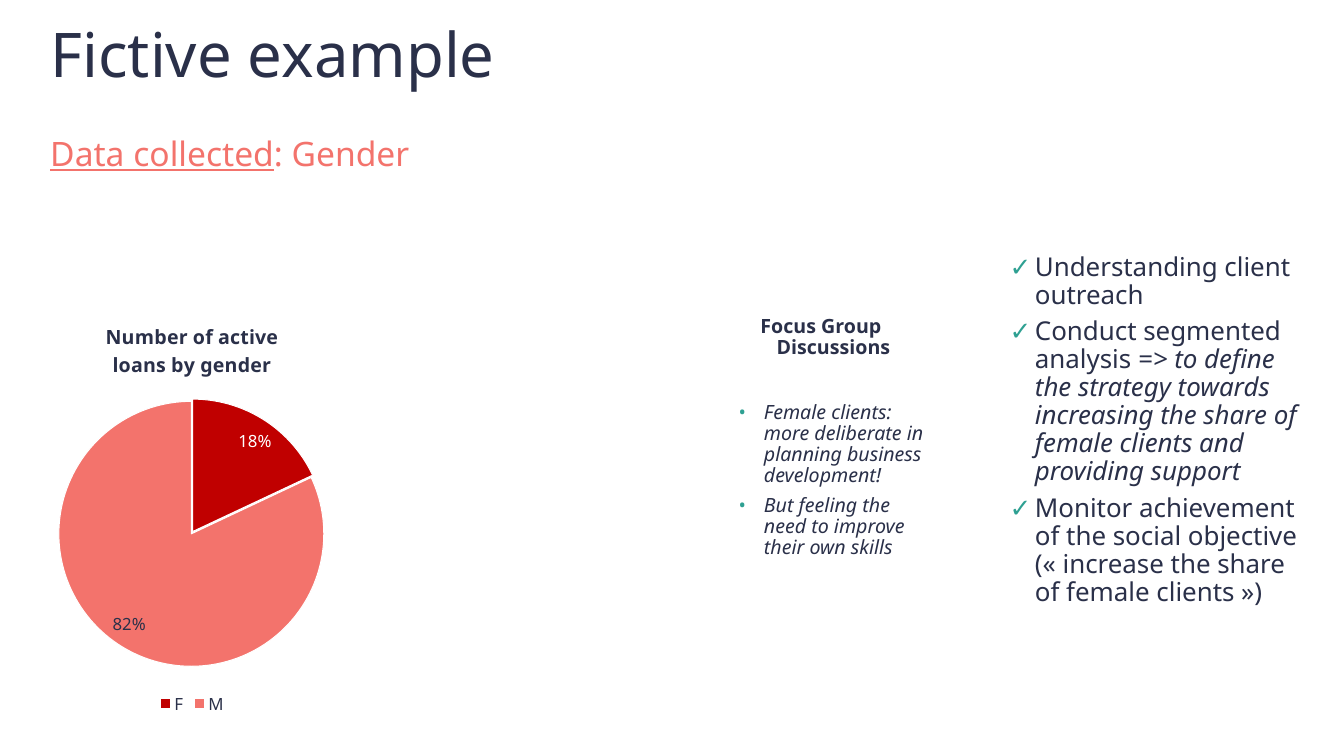
from dataclasses import dataclass

import pptx
import pptx.chart.data
import pptx.dml.color
import pptx.enum.chart
import pptx.enum.text
import pptx.oxml
import pptx.oxml.ns
import pptx.util

Pt = pptx.util.Pt
RGBColor = pptx.dml.color.RGBColor
Align = pptx.enum.text.PP_ALIGN
Anchor = pptx.enum.text.MSO_ANCHOR

NAVY = RGBColor(0x2A, 0x30, 0x49)
CORAL = RGBColor(0xF3, 0x73, 0x6C)
TEAL = RGBColor(0x2E, 0xA0, 0x92)
RED = RGBColor(0xC0, 0x00, 0x00)
WHITE = RGBColor(0xFF, 0xFF, 0xFF)
FONT = "Noto Sans"
HANG = 18


@dataclass
class Run:
    text: str
    italic: bool = False
    underline: bool = False


@dataclass
class Box:
    left: float
    top: float
    width: float
    height: float


def write(frame, paragraphs: list[list[Run]], *, size: float, color=NAVY, bold: bool = False,
          bullet: str = "", indent: float = HANG, hang: float = HANG, level: int = 0,
          align=Align.LEFT, anchor=Anchor.TOP, spacing: float = 0.9) -> None:
    """Fill a text frame with formatted paragraphs."""
    frame.word_wrap = True
    frame.vertical_anchor = anchor
    for index, runs in enumerate(paragraphs):
        paragraph = frame.paragraphs[0] if index == 0 else frame.add_paragraph()
        paragraph.level = level
        paragraph.alignment = align
        paragraph.line_spacing = spacing
        paragraph.space_before = Pt(0)
        paragraph.space_after = Pt(6)
        properties = paragraph._p.get_or_add_pPr()
        properties.set("marL", str(Pt(indent)))
        properties.set("indent", str(-Pt(hang)))
        if bullet:
            color_element = pptx.oxml.ns.qn("a:buClr")
            bullet_color = properties.makeelement(color_element, {})
            properties.append(bullet_color)
            bullet_color.append(properties.makeelement(
                pptx.oxml.ns.qn("a:srgbClr"), {"val": str(TEAL)}))
            properties.append(properties.makeelement(
                pptx.oxml.ns.qn("a:buFont"), {"typeface": FONT}))
            properties.append(properties.makeelement(
                pptx.oxml.ns.qn("a:buChar"), {"char": bullet}))
        for part in runs:
            run = paragraph.add_run()
            run.text = part.text
            set_font(run.font, size, color, bold)
            run.font.italic = part.italic
            run.font.underline = part.underline


def set_font(font, size: float, color, bold: bool = False) -> None:
    font.name = FONT
    font.size = Pt(size)
    font.bold = bold
    font.color.rgb = color


def add_text(slide, box: Box, paragraphs: list[list[Run]], **style) -> None:
    shape = slide.shapes.add_textbox(Pt(box.left), Pt(box.top), Pt(box.width), Pt(box.height))
    write(shape.text_frame, paragraphs, **style)


def add_gender_chart(slide, box: Box) -> None:
    loans = pptx.chart.data.CategoryChartData(number_format="0%")
    loans.categories = ["F", "M"]
    loans.add_series("Series 1", [0.18, 0.82])
    chart = slide.shapes.add_chart(
        pptx.enum.chart.XL_CHART_TYPE.PIE, Pt(box.left), Pt(box.top),
        Pt(box.width), Pt(box.height), loans).chart
    set_font(chart.font, 12, NAVY)

    chart.has_title = True
    heading = chart.chart_title.text_frame.paragraphs[0].add_run()
    heading.text = "Number of active loans by gender"
    set_font(heading.font, 14, NAVY, bold=True)
    chart.has_legend = True
    chart.legend.position = pptx.enum.chart.XL_LEGEND_POSITION.BOTTOM
    chart.legend.include_in_layout = False

    plot = chart.plots[0]
    plot.vary_by_categories = True
    gender = plot.series[0]
    for index, color in enumerate((RED, CORAL)):
        point = gender.points[index].format
        point.fill.solid()
        point.fill.fore_color.rgb = color
        point.line.color.rgb = WHITE
        point.line.width = Pt(0.75)

    # Slightly exploded slices
    explosion = pptx.oxml.parse_xml(
        f'<c:explosion {pptx.oxml.ns.nsdecls("c")} val="1"/>')
    first_point = gender._element.find(pptx.oxml.ns.qn("c:dPt"))
    first_point.addprevious(explosion)

    labels = gender.data_labels
    labels.show_value = True
    labels.number_format = "0%"
    labels.number_format_is_linked = False
    labels.position = pptx.enum.chart.XL_LABEL_POSITION.BEST_FIT
    set_font(labels.font, 12, NAVY)
    female_label = gender.points[0].data_label
    set_font(female_label.font, 12, WHITE)
    female_label.position = pptx.enum.chart.XL_LABEL_POSITION.BEST_FIT
    shown = female_label._dLbl
    shown.find(pptx.oxml.ns.qn("c:showPercent")).set("val", "0")


def main() -> None:
    deck = pptx.Presentation()
    deck.slide_width, deck.slide_height = Pt(960), Pt(540)
    slide = deck.slides.add_slide(deck.slide_layouts[5])

    # Title and subtitle
    title = slide.shapes.title
    title.left, title.top, title.width, title.height = Pt(28.8), Pt(5.8), Pt(828), Pt(70.6)
    write(title.text_frame, [[Run("Fictive example")]], size=44, indent=0, hang=0,
          anchor=Anchor.MIDDLE)
    add_text(slide, Box(28.8, 94.3, 788.4, 45.4),
             [[Run("Data collected", underline=True), Run(": Gender")]], size=24, color=CORAL)

    # Data collected
    add_gender_chart(slide, Box(31.7, 217.4, 211, 296.6))

    # Focus group findings
    add_text(slide, Box(493.9, 222.5, 185, 58.3), [[Run("Focus Group Discussions")]],
             size=14, bold=True, align=Align.CENTER)
    add_text(slide, Box(484.6, 283.7, 190.1, 131.8), [
        [Run("Female clients: more deliberate in planning business development!", italic=True)],
        [Run("But feeling the need to improve their own skills", italic=True)],
    ], size=14, bullet="•", indent=54, level=1)

    # Uses of the data
    add_text(slide, Box(714.2, 177.8, 232.6, 321.1), [
        [Run("Understanding client outreach")],
        [Run("Conduct segmented analysis "),
         Run("=> to define the strategy towards increasing the share of female clients "
             "and providing support", italic=True)],
        [Run("Monitor achievement of the social objective "
             "(« increase the share of female clients »)")],
    ], size=18.5, bullet="✓")

    deck.save("out.pptx")


if __name__ == "__main__":
    main()
